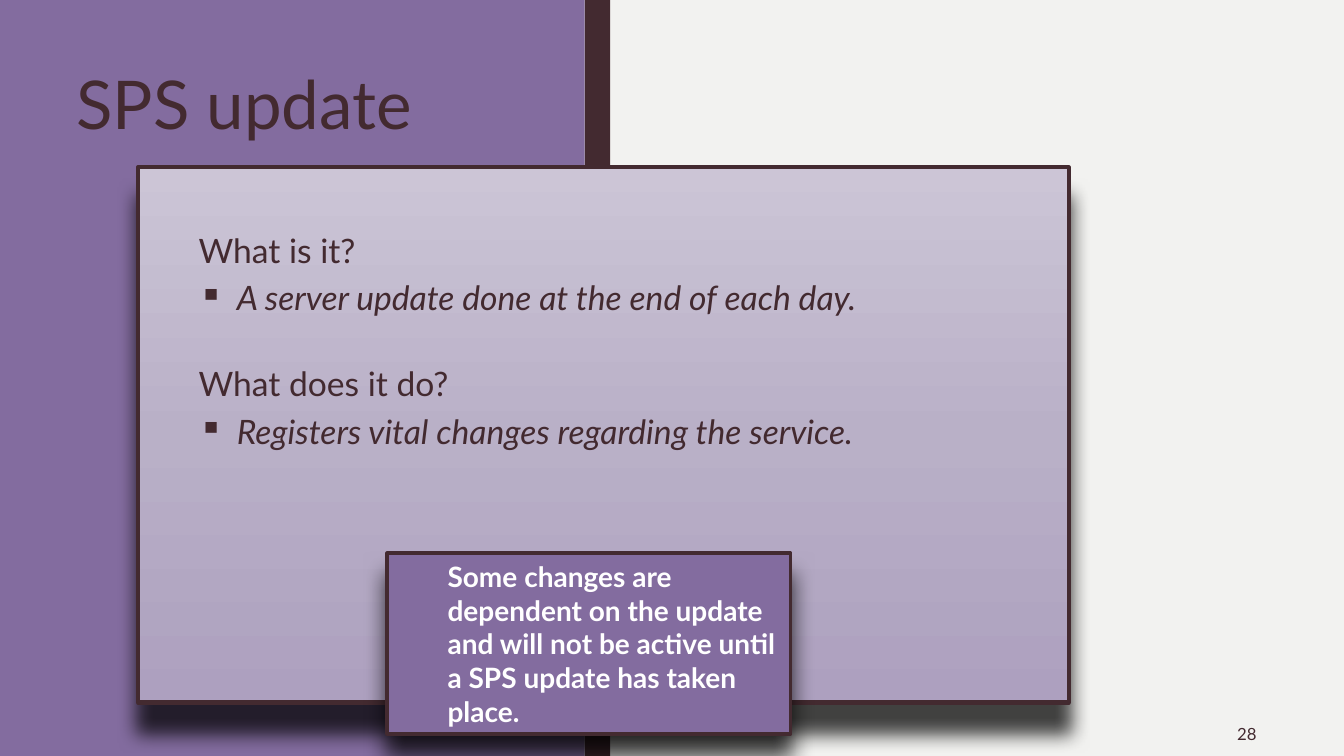
from copy import deepcopy
from dataclasses import dataclass, field
from typing import Any, Optional

from lxml import etree
from pptx import Presentation
from pptx.dml.color import RGBColor
from pptx.enum.shapes import MSO_SHAPE
from pptx.enum.text import MSO_ANCHOR, PP_ALIGN
from pptx.oxml.ns import qn
from pptx.util import Emu, Inches, Pt

RECT = MSO_SHAPE.RECTANGLE
TOP, MIDDLE = MSO_ANCHOR.TOP, MSO_ANCHOR.MIDDLE
LEFT, RIGHT = PP_ALIGN.LEFT, PP_ALIGN.RIGHT

WIDTH, HEIGHT = Inches(13.33), Inches(7.5)
FONT = "Lato"
COLORS = {
    "paper": "F2F2F0",
    "purple": "836C9F",
    "plum": "432A30",
    "white": "FFFFFF",
    "black": "000000",
    "panel_top": "CCC5D6",
    "panel_middle": "B9B0C7",
    "panel_bottom": "ADA0BF",
}


@dataclass
class Area:
    """Left, top, width and height as percentages of the slide."""
    left: float
    top: float
    width: float
    height: float

    def emu(self) -> list[Emu]:
        return [Emu(round(share * side / 100)) for share, side in (
            (self.left, WIDTH), (self.top, HEIGHT),
            (self.width, WIDTH), (self.height, HEIGHT))]


@dataclass
class Shadow:
    opacity: int
    blur: float
    distance: float


@dataclass
class Block:
    area: Area
    fills: list[str]
    line_width: float = 0
    shadow: Optional[Shadow] = None


@dataclass
class Line:
    text: str
    size: float
    color: str = "plum"
    font: dict[str, Any] = field(default_factory=dict)
    spacing: dict[str, Any] = field(default_factory=dict)
    margin: float = 0
    indent: float = 0
    bullet: str = ""


def rgb(name: str) -> RGBColor:
    return RGBColor.from_string(COLORS[name])


def apply(target: Any, values: dict[str, Any]) -> None:
    for name, value in values.items():
        setattr(target, name, value)


def fill_block(shape: Any, names: list[str]) -> None:
    if len(names) == 1:
        shape.fill.solid()
        shape.fill.fore_color.rgb = rgb(names[0])
        return
    shape.fill.gradient()
    shape.fill.gradient_angle = 270
    first_stop = next(shape._element.spPr.iter(qn("a:gs")))
    for _ in names[2:]:
        first_stop.addnext(deepcopy(first_stop))
    for index, (stop, name) in enumerate(zip(shape.fill.gradient_stops, names)):
        stop.position = index / (len(names) - 1)
        stop.color.rgb = rgb(name)


def cast_shadow(shape: Any, shadow: Shadow) -> None:
    effects = shape._element.spPr.find(qn("a:effectLst"))
    outer = etree.SubElement(
        effects, qn("a:outerShdw"), blurRad=str(Pt(shadow.blur)),
        dist=str(Pt(shadow.distance)), dir="5400000", algn="ctr", rotWithShape="0")
    color = etree.SubElement(outer, qn("a:srgbClr"), val=COLORS["black"])
    etree.SubElement(color, qn("a:alpha"), val=str(shadow.opacity * 1000))


def draw_block(slide: Any, block: Block) -> Any:
    shape = slide.shapes.add_shape(RECT, *block.area.emu())
    fill_block(shape, block.fills)
    if block.line_width:
        shape.line.color.rgb = rgb("plum")
        shape.line.width = Pt(block.line_width)
    else:
        shape.line.fill.background()
    shape.shadow.inherit = False
    if block.shadow:
        cast_shadow(shape, block.shadow)
    return shape


def write(shape: Any, lines: list[Line], anchor: Any = TOP,
          align: Any = LEFT, inset_top: float = 0.05) -> None:
    frame = shape.text_frame
    apply(frame, {"word_wrap": True, "vertical_anchor": anchor,
                  "margin_top": Inches(inset_top)})
    for index, line in enumerate(lines):
        paragraph = frame.add_paragraph() if index else frame.paragraphs[0]
        apply(paragraph, {"alignment": align, **line.spacing})
        properties = paragraph._p.get_or_add_pPr()
        properties.set("marL", str(Inches(line.margin)))
        properties.set("indent", str(Inches(line.indent)))
        if line.bullet:
            etree.SubElement(properties, qn("a:buChar"), char=line.bullet)
        run = paragraph.add_run()
        run.text = line.text
        apply(run.font, {"name": FONT, "size": Pt(line.size), **line.font})
        run.font.color.rgb = rgb(line.color)


def question(text: str, before: float = 0) -> Line:
    spacing = {"line_spacing": 0.94, "space_before": Pt(before), "space_after": Pt(2)}
    return Line(text, 24, spacing=spacing, margin=0.5)


def answer(text: str) -> Line:
    spacing = {"line_spacing": 0.94, "space_before": Pt(5), "space_after": Pt(2)}
    return Line(text, 24, font={"italic": True}, spacing=spacing,
                margin=0.88, indent=-0.38, bullet="▪")


def main() -> None:
    deck = Presentation()
    apply(deck, {"slide_width": WIDTH, "slide_height": HEIGHT})
    slide = deck.slides.add_slide(deck.slide_layouts[6])
    slide.background.fill.solid()
    slide.background.fill.fore_color.rgb = rgb("paper")

    # Backdrop: purple side and dark band
    draw_block(slide, Block(Area(0, 0, 43.51, 100), ["purple"]))
    draw_block(slide, Block(Area(43.51, 0, 1.88, 100), ["plum"]))

    # Panel with questions and answers
    panel = draw_block(slide, Block(
        Area(10.28, 22.13, 69.24, 70.8),
        ["panel_top", "panel_middle", "panel_bottom"], 3, Shadow(73, 13, 21)))
    write(panel, [
        question("What is it?"),
        answer("A server update done at the end of each day."),
        question("What does it do?", before=32),
        answer("Registers vital changes regarding the service."),
    ], inset_top=0.65)

    # Title and slide number
    title = slide.shapes.add_textbox(*Area(4.95, 9.33, 31.66, 31.47).emu())
    write(title, [Line("SPS update", 48, spacing={"line_spacing": 0.84})])
    number = slide.shapes.add_textbox(*Area(81.1, 94.13, 13.13, 5.87).emu())
    write(number, [Line("28", 12)], MIDDLE, RIGHT)

    # Note over the panel's lower edge
    note = draw_block(slide, Block(
        Area(28.81, 73.2, 30.01, 23.87), ["purple"], 2.75, Shadow(72, 16, 15)))
    write(note, [Line(
        "Some changes are dependent on the update and will not be active "
        "until a SPS update has taken place.",
        20, "white", {"bold": True}, margin=0.5)], MIDDLE)

    deck.save("out.pptx")


if __name__ == "__main__":
    main()
